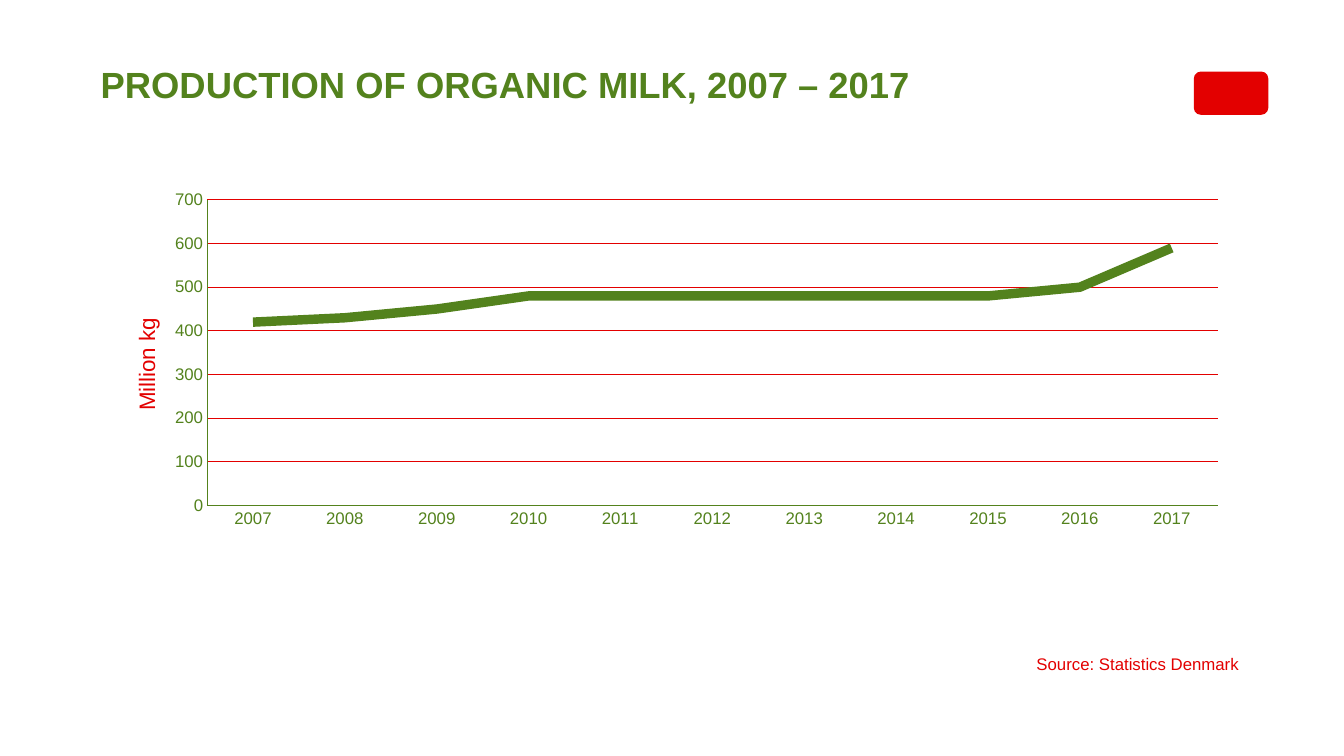
from lxml import etree
from pptx import Presentation
from pptx import util as u
from pptx.chart import data
from pptx.dml.color import RGBColor
from pptx.enum import chart as ch, shapes, text
from pptx.oxml import parse_xml
from pptx.oxml.ns import nsdecls, qn

GREEN = RGBColor(0x53, 0x82, 0x1D)
RED = RGBColor(0xE3, 0x00, 0x00)
MILK = {2007: 420, 2008: 430, 2009: 450, 2010: 480, 2011: 480, 2012: 480,
        2013: 480, 2014: 480, 2015: 480, 2016: 500, 2017: 590}


def manual_layout(x, y, w=None, h=None):
    """Build a c:layout in fractions of the chart; with a size it frames the inner plot."""
    layout = parse_xml(f"<c:layout {nsdecls('c')}><c:manualLayout/></c:layout>")
    fields = [("xMode", "edge"), ("yMode", "edge"), ("x", x), ("y", y)]
    if w is not None:
        fields = [("layoutTarget", "inner")] + fields + [("w", w), ("h", h)]
    for tag, value in fields:
        etree.SubElement(layout[0], qn(f"c:{tag}")).set("val", str(value))
    return layout


class MilkSlide:
    font = "Arial"

    def __init__(self, prs):
        self.s = prs.slides.add_slide(prs.slide_layouts[6])

    def style(self, font, size, color, bold=False):
        font.name, font.size, font.bold = self.font, u.Pt(size), bold
        font.color.rgb = color

    def text(self, box, words, size, color, bold=False, inset=(0, 0), spacing=1.0):
        tf = self.s.shapes.add_textbox(*map(u.Inches, box)).text_frame
        tf.word_wrap = True
        tf.vertical_anchor = text.MSO_ANCHOR.TOP
        tf.margin_left = tf.margin_right = u.Inches(inset[0])
        tf.margin_top = tf.margin_bottom = u.Inches(inset[1])
        tf.text = words
        p = tf.paragraphs[0]
        p.line_spacing = spacing
        self.style(p.runs[0].font, size, color, bold)

    def emblem(self, box, color):
        """Draw a plain block where the emblem sits."""
        sp = self.s.shapes.add_shape(shapes.MSO_SHAPE.ROUNDED_RECTANGLE, *map(u.Inches, box))
        sp.shadow.inherit = False
        sp.fill.solid()
        sp.fill.fore_color.rgb = color
        sp.line.fill.background()

    def axis(self, axis):
        axis.major_tick_mark = axis.minor_tick_mark = ch.XL_TICK_MARK.NONE
        axis.format.line.color.rgb = GREEN
        axis.format.line.width = u.Pt(0.75)
        self.style(axis.tick_labels.font, 12, GREEN)

    def line_chart(self, box, values, unit):
        cd = data.CategoryChartData()
        cd.categories = [str(year) for year in values]
        cd.add_series("Series 1", values.values())
        chart = self.s.shapes.add_chart(
            ch.XL_CHART_TYPE.LINE, *map(u.Inches, box), cd).chart
        chart.has_legend = chart.has_title = False
        chart.font.name, chart.font.size = self.font, u.Pt(10)

        plot = chart.plots[0]
        plot.vary_by_categories = False
        series = plot.series[0]
        series.smooth = False
        series.marker.style = ch.XL_MARKER_STYLE.NONE
        series.format.line.color.rgb = GREEN
        series.format.line.width = u.Pt(6.75)

        self.axis(chart.category_axis)
        va = chart.value_axis
        self.axis(va)
        va.minimum_scale, va.maximum_scale, va.major_unit = 0, 700, 100
        va.has_major_gridlines = True
        va.major_gridlines.format.line.color.rgb = RED
        va.major_gridlines.format.line.width = u.Pt(0.75)

        tf = va.axis_title.text_frame
        tf.text = unit
        self.style(tf.paragraphs[0].runs[0].font, 16, RED)
        body = va.axis_title._element.find(".//" + qn("a:bodyPr"))
        body.set("rot", "-5400000")
        body.set("vert", "horz")

        title = va.axis_title._element
        area = chart._chartSpace.chart.plotArea
        for parent, layout in ((title, manual_layout(0.02, 0.28)),
                               (area, manual_layout(0.09, 0.046, 0.899, 0.624))):
            old = parent.find(qn("c:layout"))
            if old is not None:
                parent.remove(old)
            parent.insert(1 if parent is title else 0, layout)


def main():
    prs = Presentation()
    prs.slide_width, prs.slide_height = u.Inches(13.33), u.Inches(7.5)
    s = MilkSlide(prs)
    s.text((0.9, 0.62, 11.47, 1.17), "PRODUCTION OF ORGANIC MILK, 2007 – 2017",
           26, GREEN, bold=True, inset=(0.1, 0.05), spacing=0.9)
    s.line_chart((1.05, 1.76, 11.15, 4.86), MILK, "Million kg")
    s.text((10.28, 6.49, 2.19, 0.2), "Source: Statistics Denmark", 12, RED)
    s.emblem((11.84, 0.71, 0.74, 0.43), RED)
    prs.save("out.pptx")


if __name__ == "__main__":
    main()
